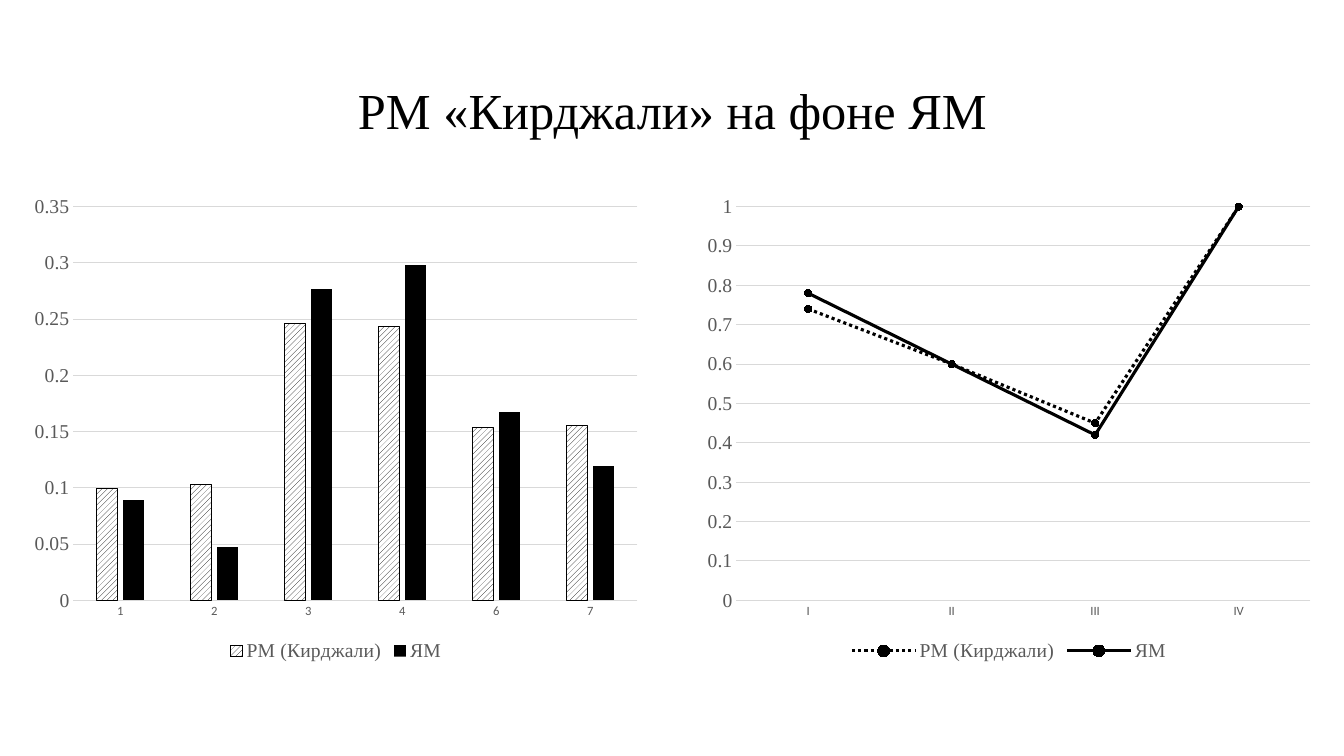
"""Build a slide that compares two language models in a column and a line chart."""
from dataclasses import dataclass
from typing import Optional

from pptx import Presentation
from pptx import util as u
from pptx.chart import data as cd
from pptx.chart.chart import Chart
from pptx.dml.color import RGBColor
from pptx.enum import chart as ce
from pptx.enum import dml, text

EMU_PER_PX = 12192000 / 1344
COLORS = {"ink": "000000", "paper": "FFFFFF", "label": "595959", "grid": "D9D9D9"}
SERIF, SANS = "Times New Roman", "Calibri"
NAMES = ("РМ (Кирджали)", "ЯМ")


@dataclass(frozen=True)
class Panel:
    left: int
    kind: ce.XL_CHART_TYPE
    cats: tuple[str, ...]
    values: tuple[tuple[float, ...], ...]
    top_value: Optional[float] = None


PANELS = (
    Panel(695, ce.XL_CHART_TYPE.LINE_MARKERS, ("I", "II", "III", "IV"),
          ((0.74, 0.6, 0.45, 1), (0.78, 0.6, 0.42, 1)), 1),
    Panel(22, ce.XL_CHART_TYPE.COLUMN_CLUSTERED, ("1", "2", "3", "4", "6", "7"),
          ((0.099, 0.103, 0.246, 0.243, 0.154, 0.155),
           (0.089, 0.047, 0.277, 0.298, 0.167, 0.119))),
)


def px(n: int) -> u.Emu:
    return u.Emu(round(n * EMU_PER_PX))


def rgb(name: str) -> RGBColor:
    return RGBColor.from_string(COLORS[name])


def set_font(font, size: int, face: str, color: str) -> None:
    font.size, font.name = u.Pt(size), face
    font.color.rgb = rgb(color)


def set_line(line, color: str, width: float) -> None:
    line.color.rgb = rgb(color)
    line.width = u.Pt(width)


def add_text(s, content: str, *, box: tuple[int, int, int, int], size: int,
             face: str = SERIF, color: str = "ink") -> None:
    tf = s.shapes.add_textbox(*map(px, box)).text_frame
    tf.word_wrap = True
    tf.vertical_anchor = text.MSO_ANCHOR.MIDDLE
    p = tf.paragraphs[0]
    p.alignment, p.line_spacing = text.PP_ALIGN.CENTER, 0.9
    r = p.add_run()
    r.text = content
    set_font(r.font, size, face, color)


def style_axes(chart: Chart, top_value: Optional[float]) -> None:
    cat, val = chart.category_axis, chart.value_axis
    for axis, size, face in ((cat, 9, SANS), (val, 14, SERIF)):
        axis.major_tick_mark = axis.minor_tick_mark = ce.XL_TICK_MARK.NONE
        set_font(axis.tick_labels.font, size, face, "label")
    set_line(cat.format.line, "grid", 0.75)
    val.format.line.fill.background()
    val.has_major_gridlines = True
    set_line(val.major_gridlines.format.line, "grid", 0.75)
    if top_value is not None:
        val.maximum_scale = top_value


def style_columns(chart: Chart) -> None:
    plot = chart.plots[0]
    plot.gap_width, plot.overlap = 219, -27
    hatched, solid = plot.series
    fill = hatched.format.fill
    fill.patterned()
    fill.pattern = dml.MSO_PATTERN.WIDE_UPWARD_DIAGONAL
    fill.fore_color.rgb, fill.back_color.rgb = rgb("ink"), rgb("paper")
    set_line(hatched.format.line, "ink", 0.75)
    solid.format.fill.solid()
    solid.format.fill.fore_color.rgb = rgb("ink")


def style_lines(chart: Chart) -> None:
    for series in chart.plots[0].series:
        series.smooth = False
        set_line(series.format.line, "ink", 2.25)
        marker = series.marker
        marker.style, marker.size = ce.XL_MARKER_STYLE.CIRCLE, 5
        marker.format.fill.solid()
        marker.format.fill.fore_color.rgb = rgb("ink")
        set_line(marker.format.line, "ink", 0.75)
    chart.plots[0].series[0].format.line.dash_style = dml.MSO_LINE.ROUND_DOT


def add_panel(s, panel: Panel) -> None:
    data = cd.CategoryChartData()
    data.categories = panel.cats
    for name, values in zip(NAMES, panel.values):
        data.add_series(name, values)
    chart = s.shapes.add_chart(panel.kind, px(panel.left), px(186),
                               px(628), px(480), data).chart
    chart.has_title = False
    set_font(chart.font, 10, SANS, "ink")
    chart.plots[0].vary_by_categories = False
    chart.has_legend = True
    chart.legend.position = ce.XL_LEGEND_POSITION.BOTTOM
    chart.legend.include_in_layout = False
    set_font(chart.legend.font, 14, SERIF, "label")
    style_axes(chart, panel.top_value)
    if panel.kind == ce.XL_CHART_TYPE.COLUMN_CLUSTERED:
        style_columns(chart)
    else:
        style_lines(chart)


def main() -> None:
    prs = Presentation()
    prs.slide_width, prs.slide_height = px(1344), px(756)
    s = prs.slides.add_slide(prs.slide_layouts[6])
    add_text(s, "РМ «Кирджали» на фоне ЯМ", box=(93, 40, 1159, 146), size=36)
    for panel in PANELS:
        add_panel(s, panel)
    prs.save("out.pptx")


if __name__ == "__main__":
    main()
